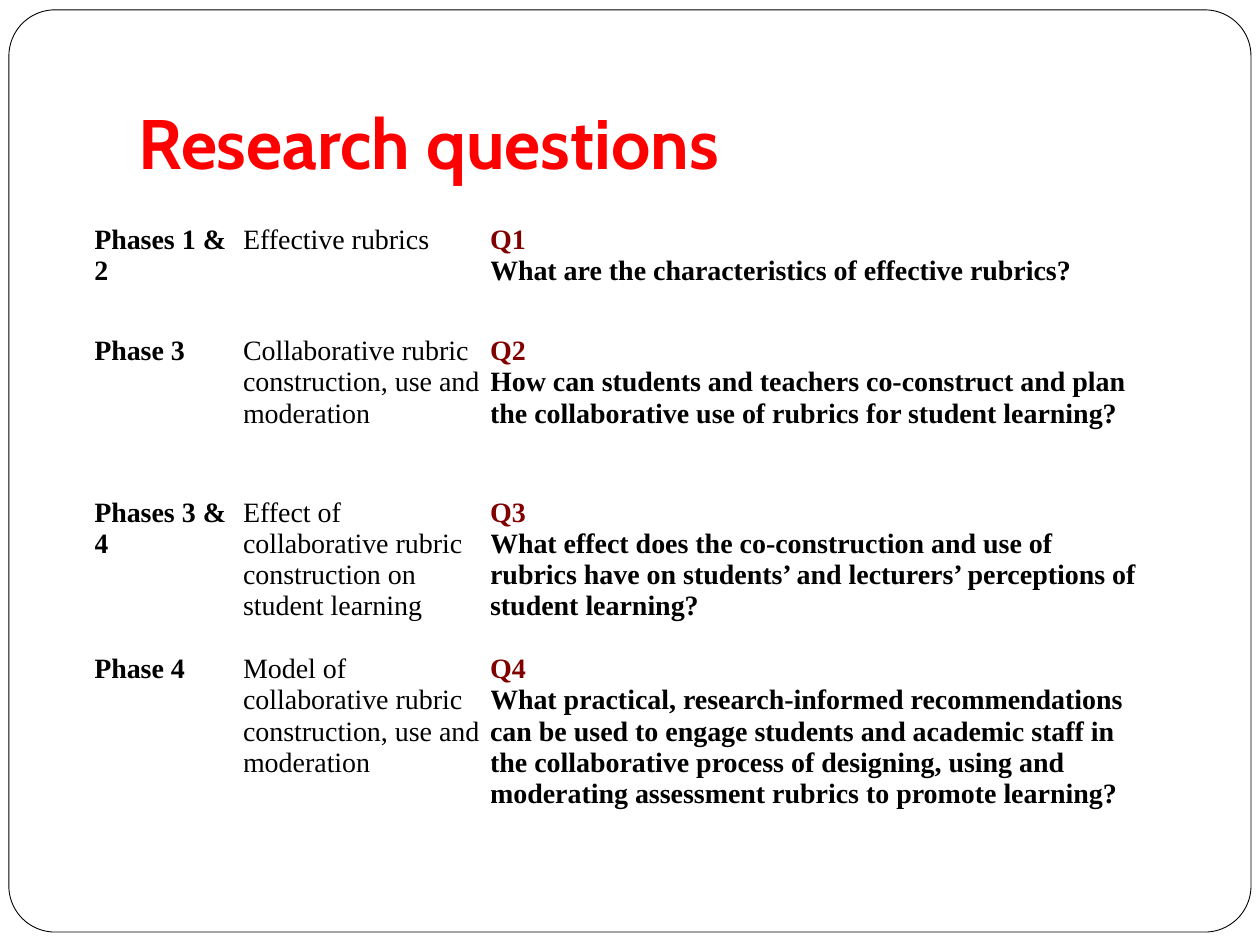
import pptx
import pptx.util
import pptx.dml.color
import pptx.enum.shapes
import pptx.enum.text

Cm = pptx.util.Cm
BLACK = pptx.dml.color.RGBColor(0, 0, 0)
WHITE = pptx.dml.color.RGBColor(255, 255, 255)
RED = pptx.dml.color.RGBColor(255, 0, 0)
MAROON = pptx.dml.color.RGBColor(128, 0, 0)

COLUMN_WIDTHS = [3, 4.98, 13.03]
LINE_HEIGHT = 0.62
# Row height, top margin, phase, focus, question label, question
RESEARCH_ROWS = [
    (1.63, 0, "Phases 1 & 2", "Effective rubrics", "Q1",
     "What are the characteristics of effective rubrics?"),
    (3.25, LINE_HEIGHT, "Phase 3",
     "Collaborative rubric construction, use and moderation", "Q2",
     "How can students and teachers co-construct and plan the collaborative "
     "use of rubrics for student learning?"),
    (3.78, LINE_HEIGHT, "Phases 3 & 4",
     "Effect of collaborative rubric construction on student learning", "Q3",
     "What effect does the co-construction and use of rubrics have on "
     "students’ and lecturers’ perceptions of student learning?"),
    (4.34, 0, "Phase 4",
     "Model of collaborative rubric construction, use and moderation", "Q4",
     "What practical, research-informed recommendations can be used to engage "
     "students and academic staff in the collaborative process of designing, "
     "using and moderating assessment rubrics to promote learning?"),
]


def add_text(paragraph, text, size=16, font="Times New Roman", color=BLACK, bold=True):
    run = paragraph.add_run()
    run.text = text
    run.font.size = pptx.util.Pt(size)
    run.font.name = font
    run.font.color.rgb = color
    run.font.bold = bold


deck = pptx.Presentation()
deck.slide_width, deck.slide_height = Cm(25.4), Cm(19.05)
slide = deck.slides.add_slide(deck.slide_layouts[5])

# Rounded border, behind everything else
border = slide.shapes.add_shape(
    pptx.enum.shapes.MSO_SHAPE.ROUNDED_RECTANGLE,
    Cm(0.18), Cm(0.2), Cm(25.04), Cm(18.59))
border.adjustments[0] = 0.05
border.shadow.inherit = False
border.fill.solid()
border.fill.fore_color.rgb = WHITE
border.line.color.rgb = BLACK
border.line.width = pptx.util.Pt(0.5)

title = slide.shapes.title
border._element.addnext(title._element)
title.left, title.top, title.width, title.height = Cm(2.54), Cm(0.76), Cm(21.59), Cm(3.18)
title_frame = title.text_frame
title_frame.auto_size = pptx.enum.text.MSO_AUTO_SIZE.NONE
title_frame.vertical_anchor = pptx.enum.text.MSO_ANCHOR.BOTTOM
title_frame.margin_bottom = Cm(0.25)
title_frame.paragraphs[0].alignment = pptx.enum.text.PP_ALIGN.LEFT
add_text(title_frame.paragraphs[0], "Research questions", size=40, font="Cabin", color=RED)

# Research questions by phase
questions = slide.shapes.add_table(
    len(RESEARCH_ROWS), len(COLUMN_WIDTHS), Cm(1.9), Cm(4.52),
    Cm(sum(COLUMN_WIDTHS)), Cm(sum(row[0] for row in RESEARCH_ROWS))).table
questions.first_row = False
questions.horz_banding = False
for column, width in zip(questions.columns, COLUMN_WIDTHS):
    column.width = Cm(width)

for row, (height, top_margin, phase, focus, label, question) in zip(questions.rows, RESEARCH_ROWS):
    row.height = Cm(height)
    for cell in row.cells:
        cell.fill.background()
        cell.margin_left = cell.margin_right = cell.margin_bottom = 0
        cell.margin_top = Cm(top_margin)
    phase_text, focus_text, question_text = [cell.text_frame.paragraphs[0] for cell in row.cells]
    add_text(phase_text, phase)
    add_text(focus_text, focus, bold=False)
    add_text(question_text, label, color=MAROON)
    question_text.add_line_break()
    add_text(question_text, question)

deck.save("out.pptx")
